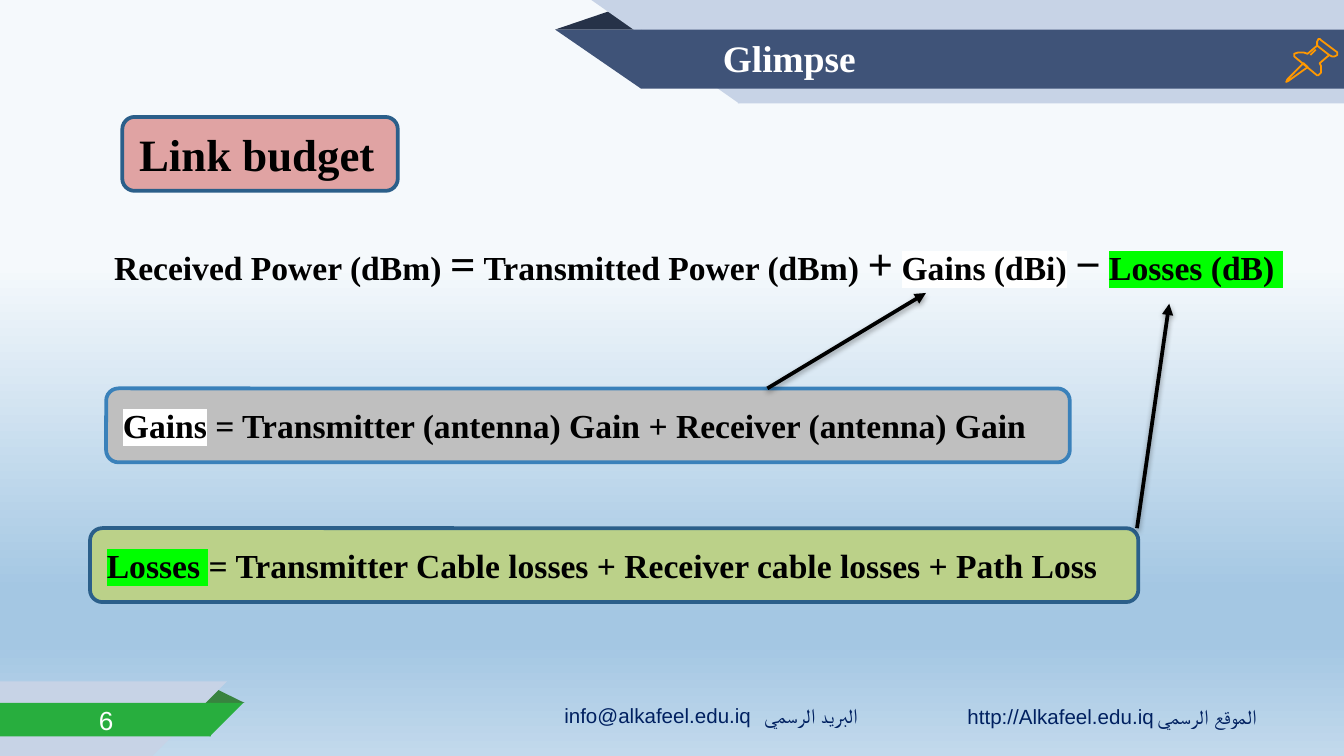
import copy
from typing import NamedTuple, Optional

import pptx
import pptx.util
from pptx.dml.color import RGBColor
from pptx.enum.shapes import MSO_CONNECTOR, MSO_SHAPE
from pptx.enum.text import MSO_ANCHOR, PP_ALIGN
from pptx.oxml import parse_xml
from pptx.oxml.ns import nsdecls, qn
from pptx.util import Inches

BLACK = RGBColor(0x00, 0x00, 0x00)
WHITE = RGBColor(0xFF, 0xFF, 0xFF)
GREEN_MARK = RGBColor(0x00, 0xFF, 0x00)
NAVY = RGBColor(0x3F, 0x53, 0x78)
DARK_NAVY = RGBColor(0x26, 0x32, 0x48)
PALE_BLUE = RGBColor(0xC7, 0xD3, 0xE6)
GREEN = RGBColor(0x28, 0xAE, 0x3E)
DARK_GREEN = RGBColor(0x38, 0x83, 0x3F)
ORANGE = RGBColor(0xFF, 0x98, 0x00)
CONTACT_BLUE = RGBColor(0x00, 0x20, 0x60)
PINK = RGBColor(0xE0, 0xA3, 0xA3)
GREY = RGBColor(0xBF, 0xBF, 0xBF)
OLIVE = RGBColor(0xBB, 0xD1, 0x89)
EDGE_BLUE = RGBColor(0x2B, 0x5F, 0x8A)
LIGHT_EDGE_BLUE = RGBColor(0x3A, 0x81, 0xBA)
SKY = [
    (0.35, RGBColor(0xF5, 0xF9, 0xFC)),
    (0.78, RGBColor(0xA4, 0xC7, 0xE3)),
    (0.85, RGBColor(0xA4, 0xC7, 0xE3)),
    (1.00, RGBColor(0xC2, 0xD9, 0xEC)),
]

SERIF = {"name": "Times New Roman", "bold": True}
SANS = {"name": "Arial"}


class Area(NamedTuple):
    left: float
    top: float
    width: float
    height: float


class Piece(NamedTuple):
    """One part of a ribbon."""
    kind: MSO_SHAPE
    area: Area
    color: RGBColor
    rotation: int = 0
    flip_v: bool = False
    apex: Optional[float] = None


class Span(NamedTuple):
    text: str
    size: int = 18
    color: RGBColor = BLACK
    mark: Optional[RGBColor] = None
    style: dict = SERIF


class Label(NamedTuple):
    area: Area
    spans: list
    align: PP_ALIGN = PP_ALIGN.LEFT
    anchor: MSO_ANCHOR = MSO_ANCHOR.TOP


class Card(NamedTuple):
    area: Area
    fill: RGBColor
    edge: RGBColor
    spans: list


RECT, CORNER, PEAK = MSO_SHAPE.RECTANGLE, MSO_SHAPE.RIGHT_TRIANGLE, MSO_SHAPE.ISOSCELES_TRIANGLE
RIBBONS = [
    Piece(PEAK, Area(4.13, 0.07, 0.65, 0.15), DARK_NAVY, apex=0.68),
    Piece(RECT, Area(5.49, 0, 4.51, 0.77), PALE_BLUE),
    Piece(CORNER, Area(4.4, 0, 1.1, 0.77), PALE_BLUE, rotation=180),
    Piece(RECT, Area(4.77, 0.22, 5.23, 0.44), NAVY),
    Piece(CORNER, Area(4.13, 0.22, 0.64, 0.44), NAVY, rotation=180),
    Piece(PEAK, Area(1.49, 5.12, 0.33, 0.11), DARK_GREEN, apex=0.32),
    Piece(RECT, Area(0, 5.07, 1.13, 0.56), PALE_BLUE),
    Piece(CORNER, Area(1.13, 5.07, 0.56, 0.56), PALE_BLUE, flip_v=True),
    Piece(RECT, Area(0, 5.23, 1.57, 0.25), GREEN),
    Piece(CORNER, Area(1.56, 5.23, 0.25, 0.25), GREEN, flip_v=True),
]

# Pushpin outlines in hundredths of an inch: (points, closed)
PUSHPIN = [
    ([(970, 47), (958, 59), (957, 61), (959, 60), (973, 50)], True),
    ([(980, 34), (989, 41), (991, 42), (993, 42), (995, 41), (995, 39),
      (983, 30), (982, 29), (981, 29), (980, 31)], True),
    ([(980, 34), (973, 40), (970, 39), (966, 39), (963, 40), (963, 42), (980, 56),
      (981, 56), (983, 54), (983, 49), (982, 47), (989, 41)], False),
    ([(975, 41), (979, 37)], False),
]


def contact(text: str) -> list:
    return [Span(text, 11, CONTACT_BLUE, style=SANS)]


LABELS = [
    Label(Area(7.1, 5.19, 1.6, 0.29), contact("http://Alkafeel.edu.iq")),
    Label(Area(8.51, 5.19, 0.94, 0.29), contact("الموقع الرسمي "), PP_ALIGN.RIGHT),
    Label(Area(4.1, 5.18, 1.69, 0.28), contact("info@alkafeel.edu.iq")),
    Label(Area(5.53, 5.18, 0.95, 0.28), contact("البريد الرسمي"), PP_ALIGN.RIGHT),
    Label(Area(0.75, 1.7, 9.08, 0.51), [
        Span("Received Power (dBm) "), Span("=", 24), Span(" Transmitted Power (dBm) "),
        Span("+", 24), Span(" "), Span("Gains (dBi)", mark=WHITE), Span(" "),
        Span("−", 24), Span(" "), Span("Losses (dB) ", mark=GREEN_MARK),
    ], anchor=MSO_ANCHOR.MIDDLE),
    Label(Area(0.02, 5.23, 1.54, 0.25), [Span("6", 14, WHITE, style=SANS)],
          PP_ALIGN.CENTER, MSO_ANCHOR.MIDDLE),
    Label(Area(5.28, 0.21, 2.68, 0.44), [Span("Glimpse", 20, WHITE)]),
]
CARDS = [
    Card(Area(0.91, 0.87, 2.05, 0.55), PINK, EDGE_BLUE, [Span("Link budget", 24)]),
    Card(Area(0.79, 2.89, 7.17, 0.55), GREY, LIGHT_EDGE_BLUE, [
        Span("Gains", mark=WHITE),
        Span(" = Transmitter (antenna) Gain + Receiver (antenna) Gain")]),
    Card(Area(0.67, 3.93, 7.8, 0.55), OLIVE, EDGE_BLUE, [
        Span("Losses ", mark=GREEN_MARK),
        Span("= Transmitter Cable losses + Receiver cable losses + Path Loss")]),
]
ARROWS = [((5.71, 2.89), (6.89, 2.18)), ((8.46, 3.93), (8.7, 2.26))]


def paint_background(page) -> None:
    fill = page.background.fill
    fill.gradient()
    fill.gradient_angle = 270
    stop_list = page.element.find(".//" + qn("a:gsLst"))
    while len(stop_list) < len(SKY):
        stop_list.append(copy.deepcopy(stop_list[0]))
    for stop, (position, color) in zip(fill.gradient_stops, SKY):
        stop.position = position
        stop.color.rgb = color


def add_filled(page, kind: MSO_SHAPE, area: Area, color: RGBColor):
    shape = page.shapes.add_shape(kind, *map(Inches, area))
    shape.shadow.inherit = False
    shape.fill.solid()
    shape.fill.fore_color.rgb = color
    shape.line.fill.background()
    return shape


def add_piece(page, piece: Piece) -> None:
    shape = add_filled(page, piece.kind, piece.area, piece.color)
    shape.rotation = piece.rotation
    if piece.apex is not None:
        shape.adjustments[0] = piece.apex
    if piece.flip_v:
        shape.element.spPr.find(qn("a:xfrm")).set("flipV", "1")


def add_outline(page, points: list, closed: bool) -> None:
    builder = page.shapes.build_freeform(*points[0], scale=Inches(0.01))
    builder.add_line_segments(points[1:], close=closed)
    shape = builder.convert_to_shape()
    shape.shadow.inherit = False
    shape.fill.background()
    shape.line.color.rgb = ORANGE
    shape.line.width = pptx.util.Pt(0.96)


def write(box, spans: list, align: PP_ALIGN, anchor: MSO_ANCHOR) -> None:
    frame = box.text_frame
    frame.word_wrap = True
    frame.vertical_anchor = anchor
    para = frame.paragraphs[0]
    para.alignment = align
    for span in spans:
        run = para.add_run()
        run.text = span.text
        for name, value in {**span.style, "size": pptx.util.Pt(span.size)}.items():
            setattr(run.font, name, value)
        run.font.color.rgb = span.color
        properties = run._r.rPr
        # Arabic letters take the complex-script font
        properties.append(parse_xml(
            f'<a:cs {nsdecls("a")} typeface="{span.style["name"]}"/>'))
        if span.mark is not None:
            properties.find(qn("a:solidFill")).addnext(parse_xml(
                f'<a:highlight {nsdecls("a")}><a:srgbClr val="{span.mark}"/></a:highlight>'))


def add_label(page, label: Label) -> None:
    box = page.shapes.add_textbox(*map(Inches, label.area))
    write(box, label.spans, label.align, label.anchor)


def add_card(page, card: Card) -> None:
    shape = add_filled(page, MSO_SHAPE.ROUNDED_RECTANGLE, card.area, card.fill)
    shape.line.color.rgb = card.edge
    shape.line.width = pptx.util.Pt(2)
    write(shape, card.spans, PP_ALIGN.LEFT, MSO_ANCHOR.MIDDLE)


def add_arrow(page, start: tuple, end: tuple) -> None:
    """Draw a black arrow with a soft shadow below it."""
    arrow = page.shapes.add_connector(MSO_CONNECTOR.STRAIGHT, *map(Inches, start + end))
    arrow.line.color.rgb = BLACK
    arrow.line.width = pptx.util.Pt(2)
    properties = arrow._element.spPr
    properties.find(qn("a:ln")).append(parse_xml(f'<a:tailEnd {nsdecls("a")} type="triangle"/>'))
    blur, distance = pptx.util.Pt(3.1), pptx.util.Pt(1.6)
    properties.append(parse_xml(
        f'<a:effectLst {nsdecls("a")}><a:outerShdw blurRad="{blur}" dist="{distance}" dir="5400000">'
        '<a:srgbClr val="000000"><a:alpha val="38000"/></a:srgbClr></a:outerShdw></a:effectLst>'))


def main() -> None:
    deck = pptx.Presentation()
    deck.slide_width = Inches(10)
    deck.slide_height = Inches(10 * 9 / 16)
    page = deck.slides.add_slide(deck.slide_layouts[6])
    paint_background(page)
    for piece in RIBBONS:
        add_piece(page, piece)
    for points, closed in PUSHPIN:
        add_outline(page, points, closed)
    for label in LABELS:
        add_label(page, label)
    for card in CARDS:
        add_card(page, card)
    for start, end in ARROWS:
        add_arrow(page, start, end)
    deck.save("out.pptx")


if __name__ == "__main__":
    main()
